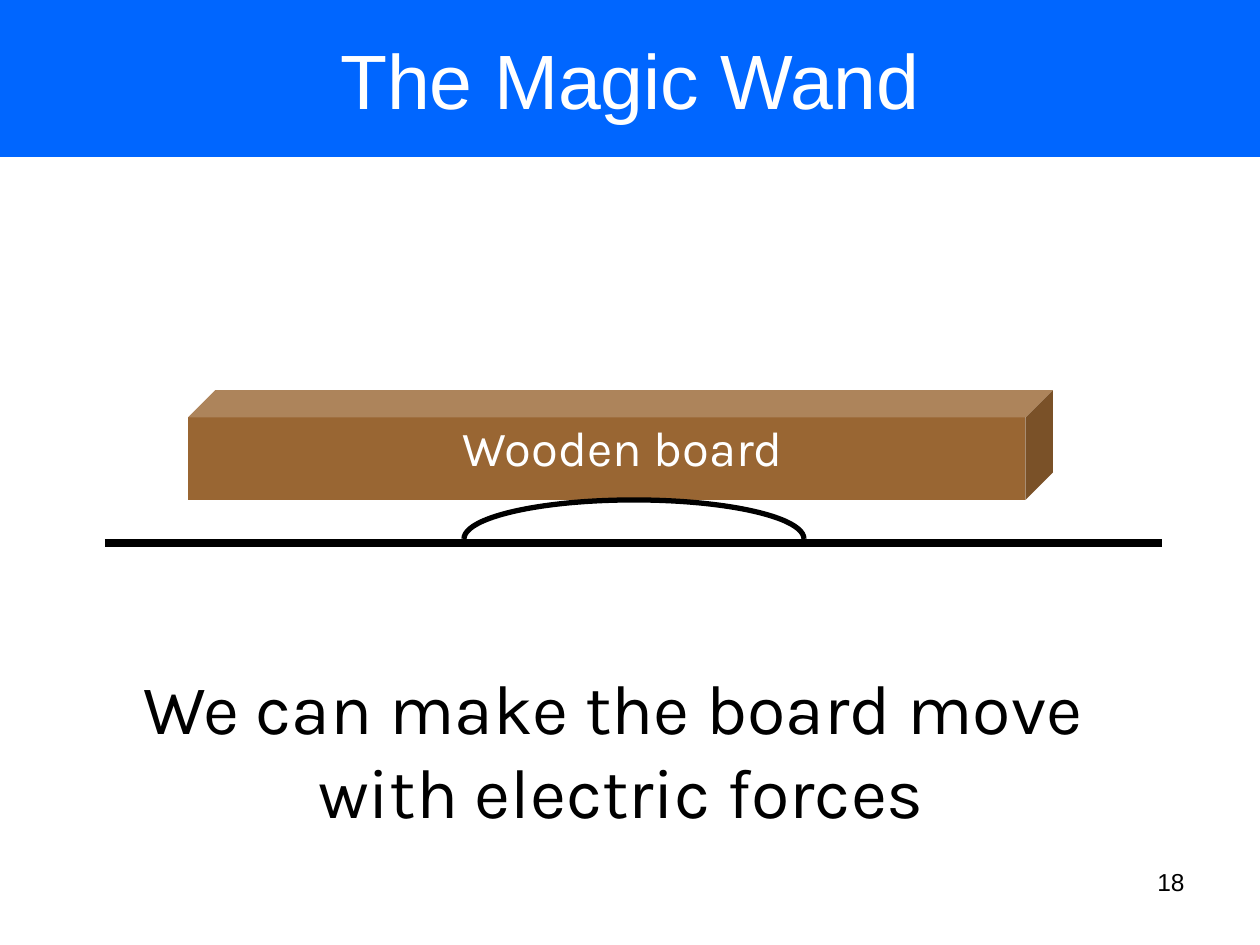
import pptx
import pptx.dml.color
import pptx.enum.shapes
import pptx.enum.text
import pptx.oxml.ns
import pptx.util
from lxml import etree

RGBColor = pptx.dml.color.RGBColor
SHAPE = pptx.enum.shapes.MSO_SHAPE
ALIGN = pptx.enum.text.PP_ALIGN
ANCHOR = pptx.enum.text.MSO_ANCHOR

BLUE = RGBColor(0x00, 0x66, 0xFF)
WOOD = RGBColor(0x99, 0x66, 0x33)
BLACK = RGBColor(0x00, 0x00, 0x00)
WHITE = RGBColor(0xFF, 0xFF, 0xFF)

PX_PER_INCH = 126


def px(*lengths):
    return [pptx.util.Emu(round(n * 914400 / PX_PER_INCH)) for n in lengths]


def write(frame, text, *, size, font="Karla", color=BLACK, align=ALIGN.CENTER,
          anchor=ANCHOR.TOP, wrap=False):
    """Fill a text frame, one paragraph per line of text."""
    frame.word_wrap = wrap
    frame.vertical_anchor = anchor
    frame.text = text
    for paragraph in frame.paragraphs:
        paragraph.alignment = align
        for run in paragraph.runs:
            run.font.name = font
            run.font.size = pptx.util.Pt(size)
            run.font.color.rgb = color


def add_text(slide, box, text, **style):
    write(slide.shapes.add_textbox(*px(*box)).text_frame, text, **style)


def add_solid(slide, preset, box, color):
    solid = slide.shapes.add_shape(preset, *px(*box))
    solid.shadow.inherit = False
    solid.fill.solid()
    solid.fill.fore_color.rgb = color
    solid.line.fill.background()
    return solid


def set_stroke(line, width):
    line.color.rgb = BLACK
    line.width = pptx.util.Pt(width)


def add_table_top(slide, start, end):
    table_top = slide.shapes.add_connector(
        pptx.enum.shapes.MSO_CONNECTOR.STRAIGHT, *px(*start, *end))
    set_stroke(table_top.line, 4.5)
    etree.SubElement(table_top._element.spPr, pptx.oxml.ns.qn("a:effectLst"))


def add_watch_glass(slide, box):
    """Draw the upper half of an ellipse as an open arc."""
    glass = slide.shapes.add_shape(SHAPE.ARC, *px(*box))
    glass.shadow.inherit = False
    glass.fill.background()
    glass.adjustments[0] = 108  # 180 degrees, in 60000ths over 100000
    glass.adjustments[1] = 0
    set_stroke(glass.line, 3)


def main():
    deck = pptx.Presentation()
    deck.slide_width, deck.slide_height = px(1260, 945)
    slide = deck.slides.add_slide(deck.slide_layouts[6])

    add_text(slide, (903, 861, 294, 66), "18", size=14, font="Arial",
             align=ALIGN.RIGHT, wrap=True)
    banner = add_solid(slide, SHAPE.RECTANGLE, (0, 0, 1260, 157), BLUE)
    write(banner.text_frame, "The Magic Wand", size=44, font="Arial",
          color=WHITE, anchor=ANCHOR.MIDDLE, wrap=True)

    board = add_solid(slide, SHAPE.CUBE, (188, 390, 865, 110), WOOD)
    board.adjustments[0] = 0.25
    add_text(slide, (450, 411, 359, 72), "Wooden board", size=28,
             color=WHITE, align=ALIGN.LEFT)
    add_text(slide, (130, 658, 982, 183),
             "We can make the board move \nwith electric forces", size=40)

    add_table_top(slide, (105, 543), (1162, 543))
    add_watch_glass(slide, (464, 500, 340, 78))
    deck.save("out.pptx")


if __name__ == "__main__":
    main()
